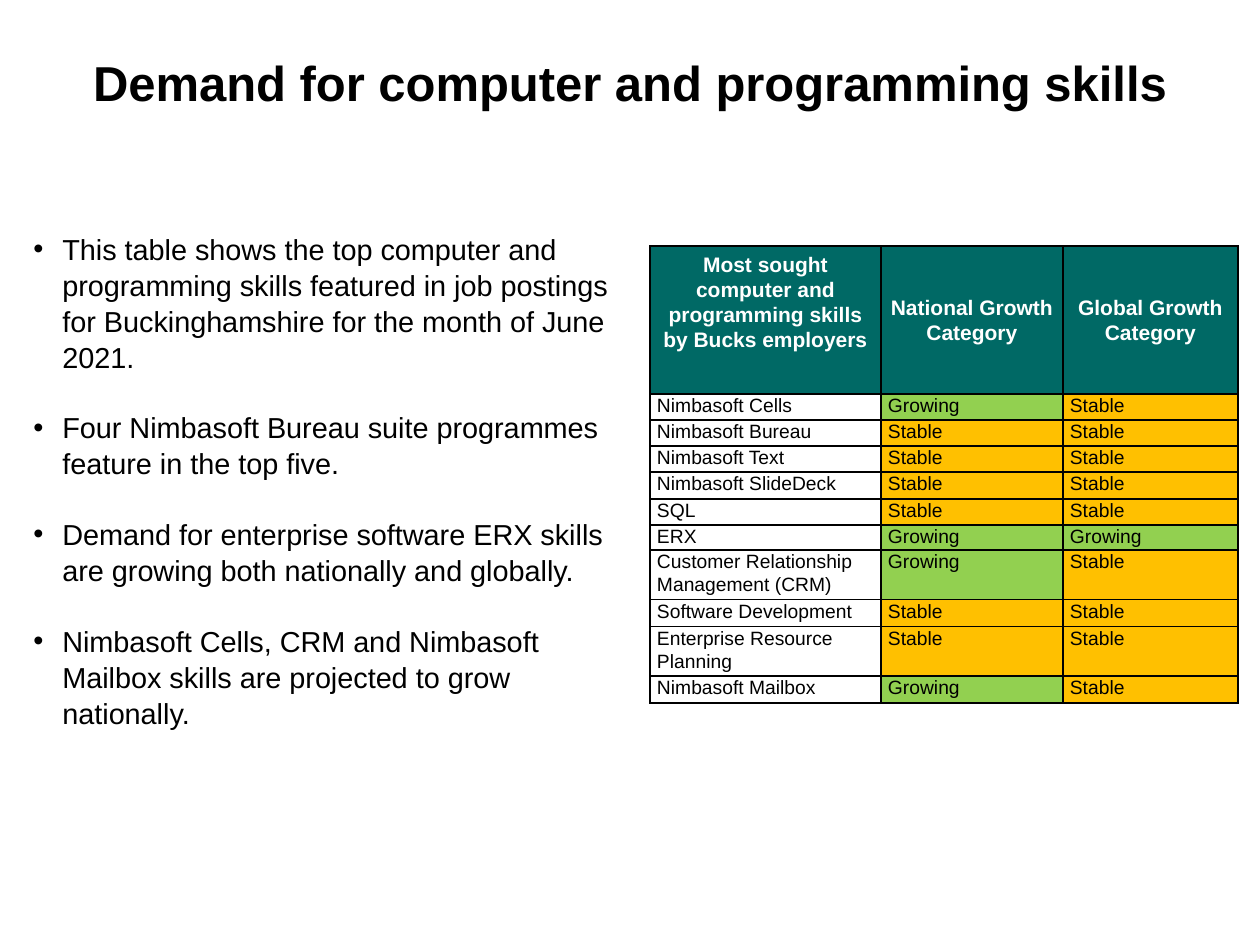
from lxml.etree import SubElement
from pptx import Presentation
from pptx.dml.color import RGBColor
from pptx.enum.text import MSO_ANCHOR, PP_ALIGN
from pptx.oxml.ns import qn
from pptx.util import Pt

PX = 914400 // 126
BLACK = RGBColor(0x00, 0x00, 0x00)
WHITE = RGBColor(0xFF, 0xFF, 0xFF)
TEAL = RGBColor(0x00, 0x69, 0x65)
FILLS = {"Growing": RGBColor(0x92, 0xD0, 0x50), "Stable": RGBColor(0xFF, 0xC0, 0x00)}

BULLETS = [
    "This table shows the top computer and programming skills featured in job postings "
    "for Buckinghamshire for the month of June 2021.",
    "Four Nimbasoft Bureau suite programmes feature in the top five.",
    "Demand for enterprise software ERX skills are growing both nationally and globally.",
    "Nimbasoft Cells, CRM and Nimbasoft Mailbox skills are projected to grow nationally.",
]
ROWS = [
    ("Most sought computer and programming skills by Bucks employers",
     "National Growth Category", "Global Growth Category"),
    ("Nimbasoft Cells", "Growing", "Stable"),
    ("Nimbasoft Bureau", "Stable", "Stable"),
    ("Nimbasoft Text", "Stable", "Stable"),
    ("Nimbasoft SlideDeck", "Stable", "Stable"),
    ("SQL", "Stable", "Stable"),
    ("ERX", "Growing", "Growing"),
    ("Customer Relationship Management (CRM)", "Growing", "Stable"),
    ("Software Development", "Stable", "Stable"),
    ("Enterprise Resource Planning", "Stable", "Stable"),
    ("Nimbasoft Mailbox", "Growing", "Stable"),
]
COL_WIDTHS = [231, 182, 175]
ROW_HEIGHTS = [148, 26, 26, 26, 27, 26, 25, 49, 27, 49, 27]


def style(p, size, color, bold=False):
    for r in p.runs:
        r.font.name = "Arial"
        r.font.size = Pt(size)
        r.font.bold = bold
        r.font.color.rgb = color


def add_borders(cell):
    tcPr = cell._tc.get_or_add_tcPr()
    for i, side in enumerate(("a:lnL", "a:lnR", "a:lnT", "a:lnB")):
        ln = SubElement(tcPr, qn(side), w=str(Pt(1)))
        fill = SubElement(ln, qn("a:solidFill"))
        SubElement(fill, qn("a:srgbClr"), val=str(BLACK))
        tcPr.insert(i, ln)


prs = Presentation()
prs.slide_width = 1260 * PX
prs.slide_height = 945 * PX
s = prs.slides.add_slide(prs.slide_layouts[5])

title = s.shapes.title
title.left, title.top, title.width, title.height = 63 * PX, 3 * PX, 1134 * PX, 157 * PX
tf = title.text_frame
tf.text = "Demand for computer and programming skills"
tf.vertical_anchor = MSO_ANCHOR.MIDDLE
tf.paragraphs[0].alignment = PP_ALIGN.CENTER
style(tf.paragraphs[0], 28, BLACK, True)

box = s.shapes.add_textbox(21 * PX, 224 * PX, 609 * PX, 538 * PX)
tf = box.text_frame
tf.word_wrap = True
for i, text in enumerate(BULLETS):
    p = tf.add_paragraph() if i else tf.paragraphs[0]
    p.text = text
    p.line_spacing = 1.04
    if i:
        p.space_before = Pt(19.8)
    pPr = p._p.get_or_add_pPr()
    pPr.set("marL", str(29 * PX))
    pPr.set("indent", str(-29 * PX))
    SubElement(pPr, qn("a:buFont"), typeface="Arial")
    SubElement(pPr, qn("a:buChar"), char="•")
    style(p, 16.5, BLACK)

frame = s.shapes.add_table(len(ROWS), len(COL_WIDTHS), 650 * PX, 246 * PX,
                           sum(COL_WIDTHS) * PX, sum(ROW_HEIGHTS) * PX)
table = frame.table
for col, width in zip(table.columns, COL_WIDTHS):
    col.width = width * PX
for row, height in zip(table.rows, ROW_HEIGHTS):
    row.height = height * PX

for i, texts in enumerate(ROWS):
    header = i == 0
    for j, text in enumerate(texts):
        cell = table.cell(i, j)
        cell.text = text
        cell.margin_left = cell.margin_right = 7 * PX
        cell.margin_top = cell.margin_bottom = 0
        cell.vertical_anchor = MSO_ANCHOR.MIDDLE if header else MSO_ANCHOR.TOP
        cell.fill.solid()
        cell.fill.fore_color.rgb = TEAL if header else FILLS.get(text, WHITE)
        p = cell.text_frame.paragraphs[0]
        p.alignment = PP_ALIGN.CENTER if header else PP_ALIGN.LEFT
        p.line_spacing = 1.07
        style(p, 12 if header else 11, WHITE if header else BLACK, header)
        add_borders(cell)
table.cell(0, 0).margin_bottom = 36 * PX

prs.save("out.pptx")
